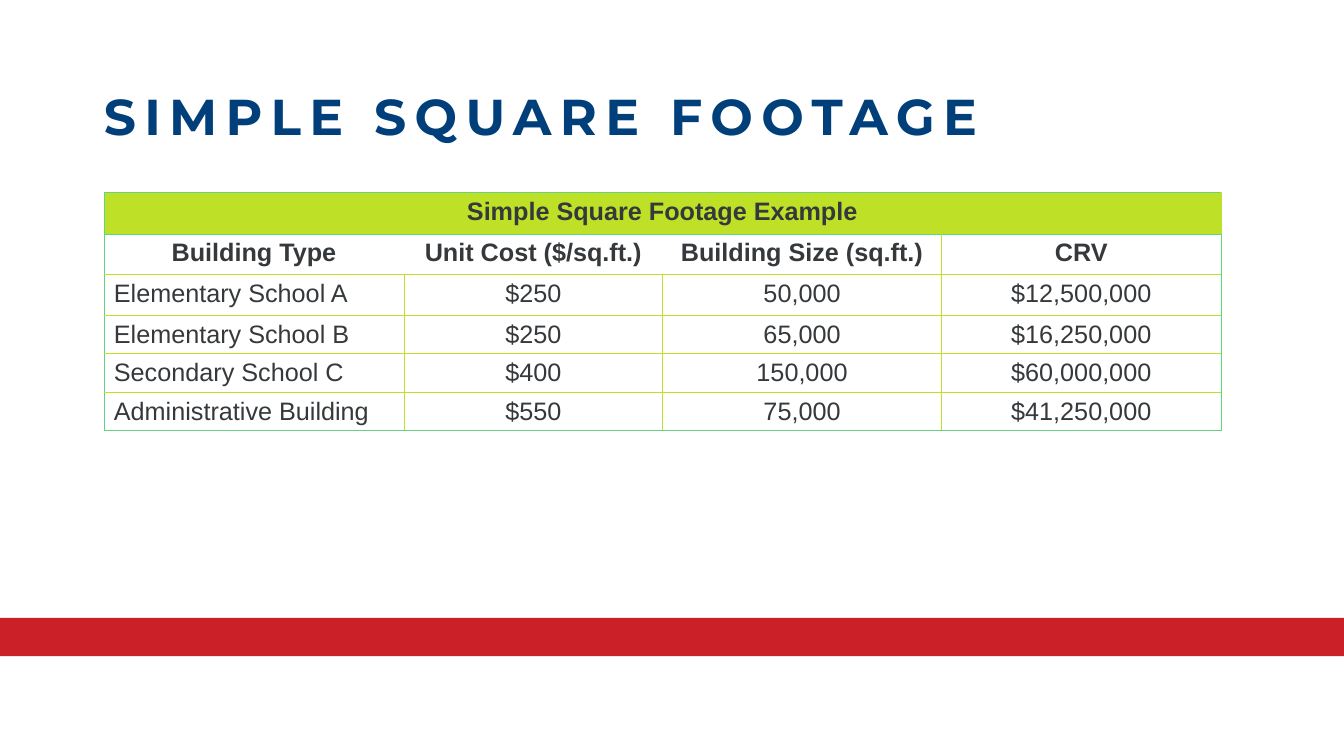
from lxml import etree
from pptx import Presentation
from pptx.dml.color import RGBColor
from pptx.enum.shapes import MSO_SHAPE
from pptx.enum.text import MSO_ANCHOR, PP_ALIGN
from pptx.oxml.ns import qn
from pptx.util import Inches, Pt

RECTANGLE = MSO_SHAPE.RECTANGLE
MIDDLE = MSO_ANCHOR.MIDDLE
LEFT, CENTER = PP_ALIGN.LEFT, PP_ALIGN.CENTER

RED = RGBColor(0xCB, 0x20, 0x27)
NAVY = RGBColor(0x01, 0x3F, 0x7A)
LIME = RGBColor(0xBE, 0xE1, 0x27)
GREEN = RGBColor(0x62, 0xD3, 0x82)
CHARCOAL = RGBColor(0x36, 0x39, 0x3B)

ROWS = [
    ["Simple Square Footage Example", "", "", ""],
    ["Building Type", "Unit Cost ($/sq.ft.)", "Building Size (sq.ft.)", "CRV"],
    ["Elementary School A", "$250", "50,000", "$12,500,000"],
    ["Elementary School B", "$250", "65,000", "$16,250,000"],
    ["Secondary School C", "$400", "150,000", "$60,000,000"],
    ["Administrative Building", "$550", "75,000", "$41,250,000"],
]
COLUMN_WIDTHS = [2.98, 2.56, 2.77, 2.77]
ROW_HEIGHTS = [0.41, 0.4, 0.41, 0.38, 0.38, 0.38]


def add_border(cell, side, color, points):
    """Draw one cell edge; a color of None leaves the edge empty."""
    properties = cell._tc.get_or_add_tcPr()
    line = etree.SubElement(properties, qn("a:ln" + side), w=str(Pt(points)))
    if color is None:
        etree.SubElement(line, qn("a:noFill"))
    else:
        fill = etree.SubElement(line, qn("a:solidFill"))
        etree.SubElement(fill, qn("a:srgbClr"), val=str(color))


deck = Presentation()
deck.slide_width, deck.slide_height = Inches(13.33), Inches(7.5)
page = deck.slides.add_slide(deck.slide_layouts[5])

# Red band
band = page.shapes.add_shape(RECTANGLE, 0, Inches(6.13), deck.slide_width, Inches(0.38))
band.shadow.inherit = False
band.fill.solid()
band.fill.fore_color.rgb = RED
band.line.fill.background()

# Title
title = page.shapes.title
title.left, title.top = Inches(0.93), Inches(0.83)
title.width, title.height = Inches(11.07), Inches(0.71)
title.text_frame.vertical_anchor = MIDDLE
title.text_frame.word_wrap = True
para = title.text_frame.paragraphs[0]
para.alignment = LEFT
para.line_spacing = 0.9
span = para.add_run()
span.text = "SIMPLE SQUARE FOOTAGE"
span.font.name = "Montserrat"
span.font.size = Pt(36)
span.font.bold = True
span.font.color.rgb = NAVY
span.font._element.set("spc", "600")

# Table grid
table = page.shapes.add_table(
    len(ROWS), len(COLUMN_WIDTHS), Inches(1.03), Inches(1.91),
    Inches(sum(COLUMN_WIDTHS)), Inches(sum(ROW_HEIGHTS))).table
table.first_row = False
table.horz_banding = False
for column, width in zip(table.columns, COLUMN_WIDTHS):
    column.width = Inches(width)
for row, height in zip(table.rows, ROW_HEIGHTS):
    row.height = Inches(height)
table.cell(0, 0).merge(table.cell(0, 3))

# Cells: green outside and under the caption, lime inside
last_row, last_column = len(ROWS) - 1, len(COLUMN_WIDTHS) - 1
for r, texts in enumerate(ROWS):
    for c, text in enumerate(texts):
        cell = table.cell(r, c)
        outer = {"L": c == 0, "R": c == last_column,
                 "T": r <= 1, "B": r in (0, last_row)}
        open_sides = {"L": r == 1 and c in (1, 2), "R": r == 1 and c in (0, 1)}
        for side, is_outer in outer.items():
            if open_sides.get(side):
                add_border(cell, side, None, 0)
            elif is_outer:
                add_border(cell, side, GREEN, 0.5)
            else:
                add_border(cell, side, LIME, 1)
        if r == 0:
            cell.fill.solid()
            cell.fill.fore_color.rgb = LIME
        else:
            cell.fill.background()
        if not text:
            continue
        cell.text = text
        para = cell.text_frame.paragraphs[0]
        para.alignment = LEFT if r > 1 and c == 0 else CENTER
        para.font.name = "Arial"
        para.font.size = Pt(18)
        para.font.bold = r <= 1
        para.font.color.rgb = CHARCOAL

deck.save("out.pptx")
